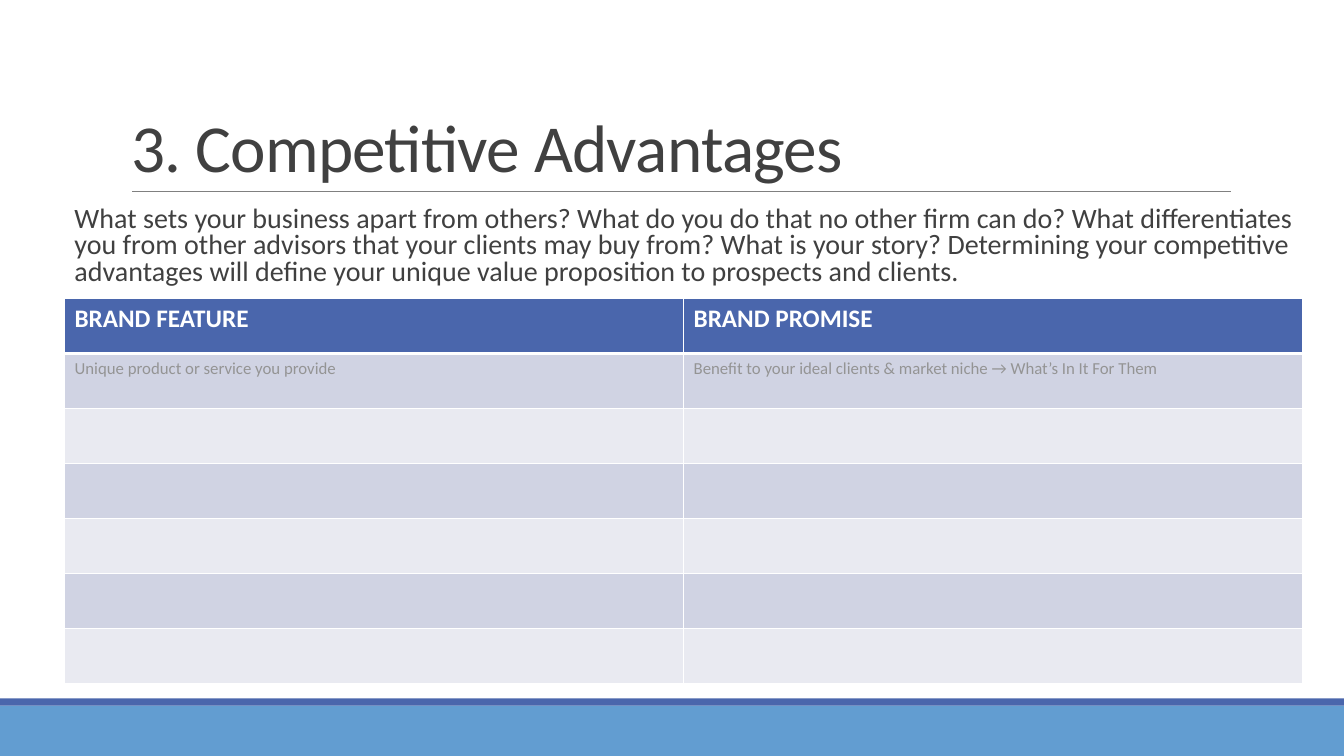
"""Build the competitive advantages slide."""
from lxml import etree
from pptx import Presentation
from pptx.dml.color import RGBColor
from pptx.enum import shapes, text
from pptx.oxml.ns import qn
from pptx.util import Inches, Pt

TITLE = "3. Competitive Advantages"
INTRO = ("What sets your business apart from others? What do you do that no other firm can do? "
         "What differentiates you from other advisors that your clients may buy from? "
         "What is your story? Determining your competitive advantages will define your "
         "unique value proposition to prospects and clients.")
HEADS = ("BRAND FEATURE", "BRAND PROMISE")
HINTS = ("Unique product or service you provide",
         "Benefit to your ideal clients & market niche → What’s In It For Them")
ROWS = [HEADS, HINTS] + [("", "")] * 5

FONT = "Calibri"
WHITE = RGBColor(0xFF, 0xFF, 0xFF)
DARK = RGBColor(0x40, 0x40, 0x40)
GRAY = RGBColor(0x80, 0x80, 0x80)
PALE = RGBColor(0x94, 0x94, 0x94)
NAVY = RGBColor(0x4A, 0x66, 0xAC)
SKY = RGBColor(0x62, 0x9D, 0xD1)
BANDS = (RGBColor(0xE9, 0xEA, 0xF1), RGBColor(0xD0, 0xD3, 0xE3))

WIDE, HIGH = 13.33, 7.5
LEFT, SPAN = 0.64, 12.28
ROW = 3.82 / len(ROWS)


def box(*sides):
    """Turn inches into lengths."""
    return [Inches(side) for side in sides]


def style(para, size, color, bold=False):
    """Format every run of a paragraph."""
    for run in para.runs:
        font = run.font
        font.name, font.size, font.bold = FONT, Pt(size), bold
        font.color.rgb = color


def bar(slide, top, high, color):
    """Draw a band across the slide."""
    rect = slide.shapes.add_shape(shapes.MSO_SHAPE.RECTANGLE, *box(0, top, WIDE, high))
    rect.shadow.inherit = False
    rect.fill.solid()
    rect.fill.fore_color.rgb = color
    rect.line.fill.background()


def edge(cell, side, width):
    """Give one side of a cell a white border."""
    line = etree.SubElement(cell._tc.get_or_add_tcPr(), qn("a:ln" + side), w=str(Pt(width)))
    fill = etree.SubElement(line, qn("a:solidFill"))
    etree.SubElement(fill, qn("a:srgbClr"), val=str(WHITE))


def head(slide):
    """Place the title, its rule and the introduction."""
    title = slide.shapes.title
    title.left, title.top, title.width, title.height = box(1.2, 0.31, 11, 1.59)
    frame = title.text_frame
    frame.text = TITLE
    frame.vertical_anchor = text.MSO_ANCHOR.BOTTOM
    frame.auto_size = text.MSO_AUTO_SIZE.NONE
    para = frame.paragraphs[0]
    para.alignment, para.line_spacing = text.PP_ALIGN.LEFT, 0.85
    style(para, 48, DARK)
    para.runs[0].font._element.set("spc", "-50")

    rule = slide.shapes.add_connector(shapes.MSO_CONNECTOR.STRAIGHT, *box(1.31, 1.9, 12.21, 1.9))
    rule.line.color.rgb, rule.line.width = GRAY, Pt(0.5)
    etree.SubElement(rule._element.spPr, qn("a:effectLst"))

    frame = slide.shapes.add_textbox(*box(LEFT, 2, SPAN, 0.96)).text_frame
    frame.word_wrap = True
    frame.margin_left, frame.margin_top, frame.margin_right, frame.margin_bottom = box(0.1, 0.05, 0, 0.05)
    frame.text = INTRO
    para = frame.paragraphs[0]
    para.line_spacing = 0.8
    style(para, 20, DARK)


def grid(slide):
    """Build the feature and promise table."""
    table = slide.shapes.add_table(len(ROWS), len(HEADS), *box(LEFT, 2.96, SPAN, ROW * len(ROWS))).table
    for r, row in enumerate(ROWS):
        table.rows[r].height = Inches(ROW)
        for c, words in enumerate(row):
            cell = table.cell(r, c)
            for side in "LRTB":
                thick = (r == 0 and side == "B") or (r == 1 and side == "T")
                edge(cell, side, 3 if thick else 1)
            cell.fill.solid()
            cell.fill.fore_color.rgb = BANDS[r % 2] if r else NAVY
            cell.text = words
            look = (12, PALE) if r else (18, WHITE, True)
            style(cell.text_frame.paragraphs[0], *look)


def main():
    """Make and save the slide."""
    deck = Presentation()
    deck.slide_width, deck.slide_height = box(WIDE, HIGH)
    slide = deck.slides.add_slide(deck.slide_layouts[5])
    bar(slide, 7, 0.5, SKY)
    bar(slide, 6.93, 0.07, NAVY)
    head(slide)
    grid(slide)
    deck.save("out.pptx")


if __name__ == "__main__":
    main()
